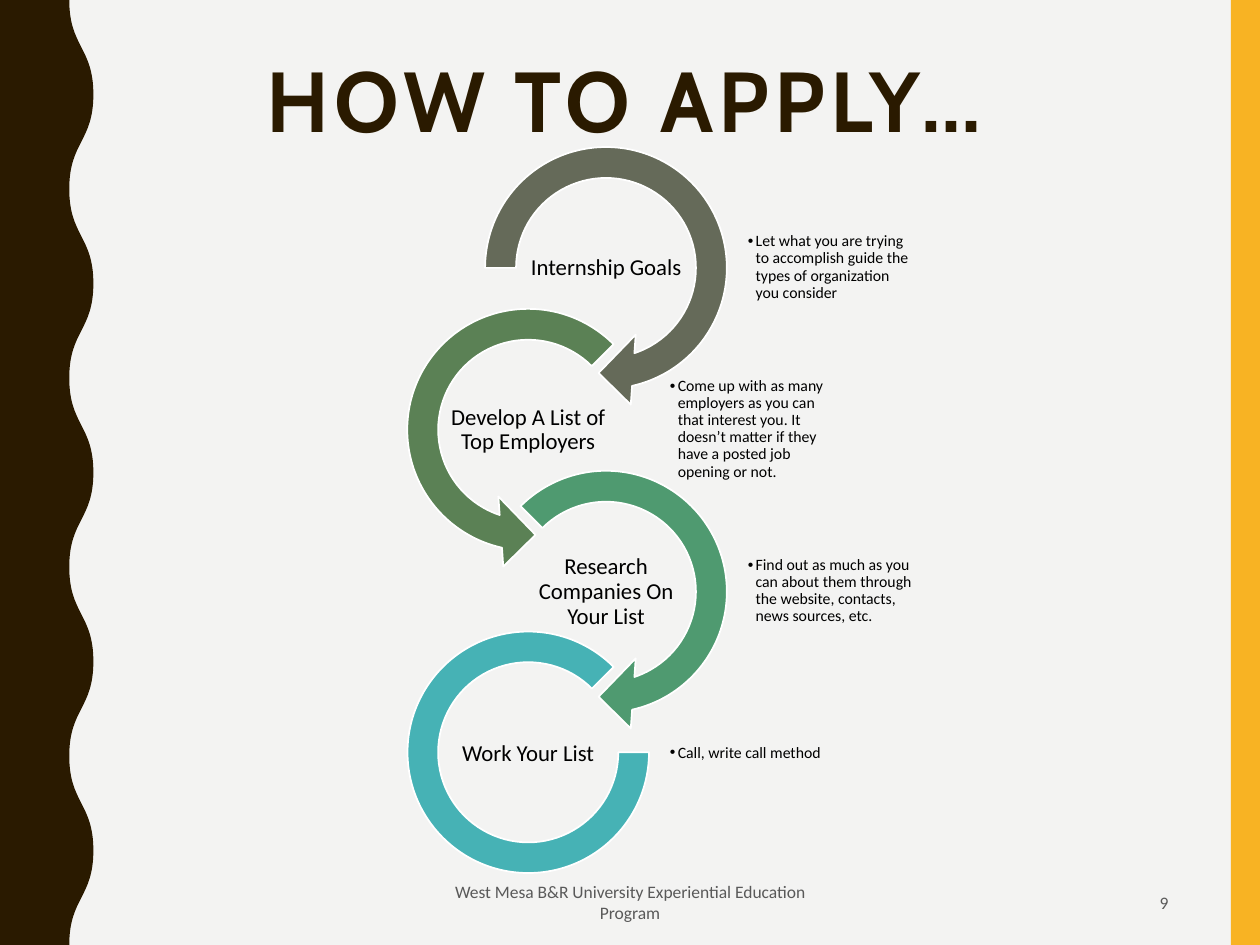
from lxml import etree
from pptx import Presentation
from pptx import util as u
from pptx.dml.color import RGBColor
from pptx.enum import shapes, text
from pptx.oxml.ns import qn

Pt = u.Pt
KIND = shapes.MSO_SHAPE
SIDE = text.PP_ALIGN
WIDE, HIGH = 720, 540
RING = 160.6
STEPS = [
    ("Internship Goals",
     "Let what you are trying to accomplish guide the types of organization you consider",
     "656A59", KIND.CIRCULAR_ARROW, (0.11, 11.42, 45, 108, 0.125)),
    ("Develop A List of Top Employers",
     "Come up with as many employers as you can that interest you. It doesn’t matter "
     "if they have a posted job opening or not.",
     "5B8155", KIND.LEFT_CIRCULAR_ARROW, (0.11, 11.42, 63, 189, 0.125)),
    ("Research Companies On Your List",
     "Find out as much as you can about them through the website, contacts, news sources, etc.",
     "4F9A70", KIND.CIRCULAR_ARROW, (0.11, 11.42, 45, 135, 0.125)),
    ("Work Your List", "Call, write call method",
     "46B2B5", KIND.BLOCK_ARC, (0, 189, 0.127)),
]


def paint(item, color):
    """Give a fill or a font a solid colour."""
    if hasattr(item, "solid"):
        item.solid()
        item = item.fore_color
    else:
        item = item.color
    item.rgb = RGBColor.from_string(color)


def style(shape, fill, line=None):
    """Set fill and line, without a shadow."""
    shape.shadow.inherit = False
    paint(shape.fill, fill)
    if line:
        paint(shape.line.fill, line)
        shape.line.width = Pt(1)
    else:
        shape.line.fill.background()


def write(slide, words, box, size=10, font="Calibri", color="000000", bold=False,
          align=SIDE.CENTER, anchor=text.MSO_ANCHOR.MIDDLE, inset=None,
          lead=None, track=None, bullet=False):
    """Place a wrapped text box with one formatted paragraph."""
    frame = slide.shapes.add_textbox(*map(Pt, box)).text_frame
    frame.word_wrap = True
    frame.vertical_anchor = anchor
    if inset is not None:
        frame.margin_left = frame.margin_right = Pt(inset)
        frame.margin_top = frame.margin_bottom = Pt(inset)
    para = frame.paragraphs[0]
    para.alignment = align
    if lead:
        para.line_spacing = lead
    run = para.add_run()
    run.text = words
    run.font.size, run.font.name, run.font.bold = Pt(size), font, bold
    paint(run.font, color)
    if track:
        run.font._element.set("spc", str(track * 100))
    if bullet:
        props = para._p.get_or_add_pPr()
        props.set("marL", str(Pt(4.5)))
        props.set("indent", str(Pt(-4.5)))
        etree.SubElement(props, qn("a:buFont")).set("typeface", "Arial")
        etree.SubElement(props, qn("a:buChar")).set("char", "•")


def bend(line, last):
    """Turn a straight segment into an S-curve and return its end."""
    end = line[0]
    spot = [int(end.get(k)) for k in "xy"]
    mid = (last[1] + spot[1]) // 2
    line.tag = qn("a:cubicBezTo")
    for i, across in enumerate((last[0], spot[0])):
        knob = etree.Element(qn("a:pt"), x=str(across), y=str(mid))
        line.insert(i, knob)
    return spot


def wave(slide, x, y, w, h, low=39.6, count=10):
    """Draw the left band with a smooth wavy right edge."""
    edge = [(x + (w if i % 2 else low), y + h * i / count) for i in range(count + 1)]
    nodes = [(Pt(a), Pt(b)) for a, b in edge + [(x, y + h), (x, y)]]
    pen = slide.shapes.build_freeform(*nodes[0])
    pen.add_line_segments(nodes[1:])
    band = pen.convert_to_shape()
    last = [Pt(low), 0]
    for line in list(band._element.iter(qn("a:lnTo")))[:count]:
        last = bend(line, last)
    style(band, "2A1A00")


def frame(slide, x, y, w, h):
    """Draw the side bands, title and footer."""
    bar = slide.shapes.add_shape(KIND.RECTANGLE, Pt(x + w - 16.6), Pt(y), Pt(16.6), Pt(h))
    style(bar, "F8B323")
    wave(slide, x, y, 53.4, h)
    write(slide, "HOW TO APPLY…", (x + 41.8, y + 30.2, 630, 43.2), size=48.6,
          font="Cabin", color="2A1A00", bold=True, lead=0.9, track=3,
          anchor=text.MSO_ANCHOR.TOP)
    foot = y + h - 38.2
    write(slide, "West Mesa B&R University Experiential Education Program",
          (x + 238.3, foot, 243.4, 27.4), color="595959")
    write(slide, "9", (x + 508.5, foot, 166.3, 27.4), color="595959", align=SIDE.RIGHT)


def step(slide, x, y, label, note, color, kind, adjust):
    """Draw one ring with its label inside and its note at the right."""
    box = (x, y, RING, RING)
    if kind == KIND.BLOCK_ARC:
        box = (x + 11.4, y + 10.6, 138, 138)
    ring = slide.shapes.add_shape(kind, *map(Pt, box))
    for i, value in enumerate(adjust):
        ring.adjustments[i] = value
    style(ring, color, "FFFFFF")
    write(slide, note, (x + RING, y + 48, 96.5, 64), size=9, align=SIDE.LEFT,
          inset=0.7, lead=0.9, bullet=True)
    write(slide, label, (x + 35.2, y + 58.2, 90.2, 44.6), size=13, inset=0.5, lead=0.9)


def chain(slide, x, y, shift=44.5, pitch=92.5):
    """Stack the steps in a zigzag."""
    for i, parts in enumerate(STEPS):
        step(slide, x + shift * (1 - i % 2), y + pitch * i, *parts)


def main():
    """Build and save the slide."""
    deck = Presentation()
    deck.slide_width, deck.slide_height = Pt(WIDE), Pt(HIGH)
    slide = deck.slides.add_slide(deck.slide_layouts[6])
    paint(slide.background.fill, "F3F3F2")
    frame(slide, 0, 0, WIDE, HIGH)
    chain(slide, 221.5, 72.8)
    deck.save("out.pptx")


if __name__ == "__main__":
    main()
